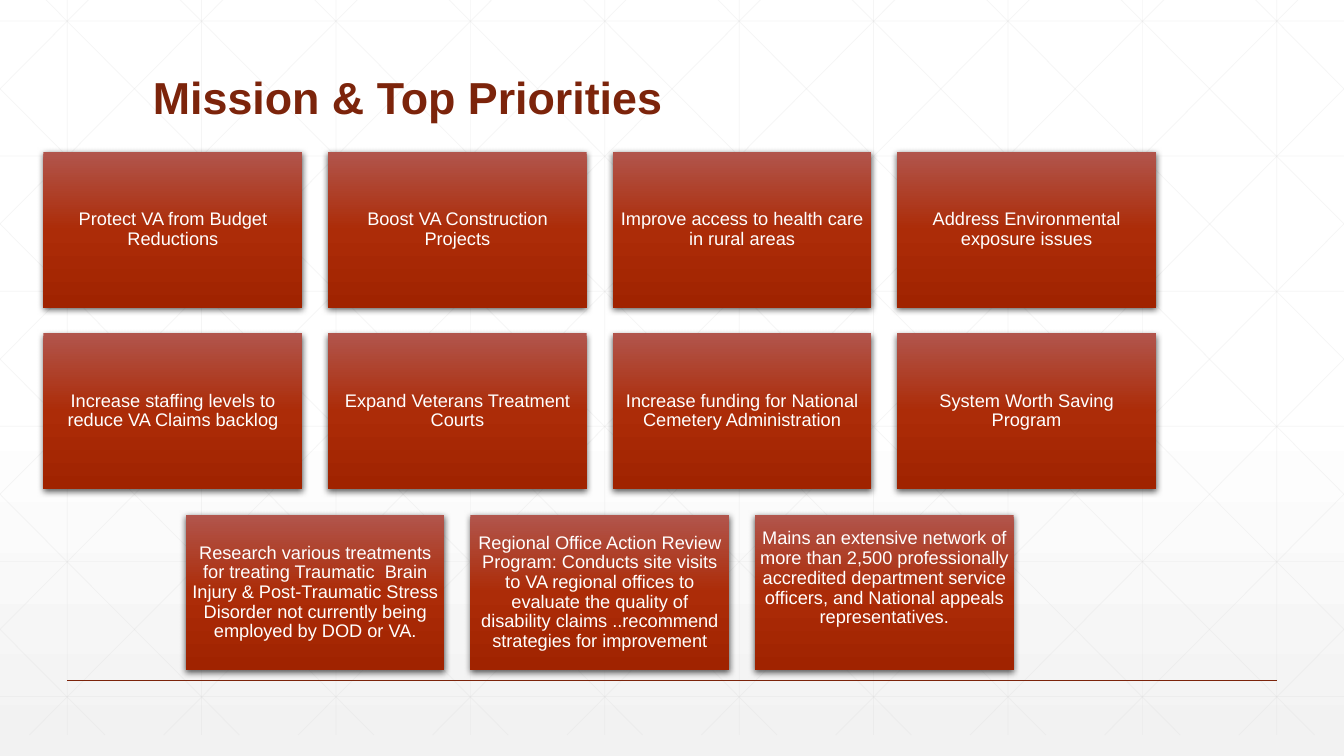
"""Build the Mission & Top Priorities slide."""
from lxml import etree
from pptx import Presentation
from pptx import util as u
from pptx.dml.color import RGBColor
from pptx.enum import shapes, text
from pptx.oxml import ns

TITLE = "Mission & Top Priorities"
ROWS = [
    ["Protect VA from Budget Reductions",
     "Boost VA Construction Projects",
     "Improve access to health care in rural areas",
     "Address Environmental exposure issues"],
    ["Increase staffing levels to reduce VA Claims backlog",
     "Expand Veterans Treatment Courts",
     "Increase funding for National Cemetery Administration",
     "System Worth Saving Program"],
    ["Research various treatments for treating Traumatic  Brain Injury & "
     "Post-Traumatic Stress Disorder not currently being employed by DOD or VA.",
     "Regional Office Action Review Program: Conducts site visits to VA regional "
     "offices to evaluate the quality of disability claims ..recommend strategies "
     "for improvement",
     "Mains an extensive network of more than 2,500 professionally accredited "
     "department service officers, and National appeals representatives."],
]
COLORS = {"accent": "7C240B", "lattice": "D9D9D9", "white": "FFFFFF", "grey": "F2F2F2",
          "card_top": "B1554C", "card_mid": "AC2C08", "card_end": "A02300",
          "shadow": "000000"}
PAGE_STOPS = [(0, "white"), (53, "white"), (100, "grey")]
CARD_STOPS = [(0, "card_top"), (50, "card_mid"), (100, "card_end")]
FONT = "Arial"
PAGE_W, PAGE_H = 960, 540
LATTICE_TOP, LATTICE_H, DIAGONAL_W, STEP = -15, 540, 537, 96
CARD_LEFT, CARD_TOP, CARD_W, CARD_H, GAP = 31.1, 108.7, 184.75, 111, 18.5
INSET, LAST_BOTTOM_INSET = 3.6, 23.6


def rgb(name):
    return RGBColor.from_string(COLORS[name])


def add_color(parent, name, alpha=None):
    clr = etree.SubElement(parent, ns.qn("a:srgbClr"), val=COLORS[name])
    if alpha:
        etree.SubElement(clr, ns.qn("a:alpha"), val=str(alpha * 1000))


def set_gradient(fill, element, stops):
    fill.gradient()
    fill.gradient_angle = 270
    stop_list = element.find(".//" + ns.qn("a:gsLst"))
    for old in list(stop_list):
        stop_list.remove(old)
    for pos, name in stops:
        add_color(etree.SubElement(stop_list, ns.qn("a:gs"), pos=str(pos * 1000)), name)


def add_line(s, x1, y1, x2, y2, color, width, alpha=None):
    c = s.shapes.add_connector(shapes.MSO_CONNECTOR.STRAIGHT,
                               *(u.Pt(round(v, 2)) for v in (x1, y1, x2, y2)))
    c.line.color.rgb = rgb(color)
    c.line.width = u.Pt(width)
    if alpha:
        clr = c._element.find(".//" + ns.qn("a:srgbClr"))
        etree.SubElement(clr, ns.qn("a:alpha"), val=str(alpha * 1000))
    etree.SubElement(c._element.spPr, ns.qn("a:effectLst"))


def add_lattice(s):
    bottom = LATTICE_TOP + LATTICE_H
    lines = [(x, LATTICE_TOP, x, bottom) for x in range(48, PAGE_W, STEP)]
    lines += [(0, 15 + 96.5 * i, PAGE_W, 15 + 96.5 * i) for i in range(6)]
    slope = LATTICE_H / DIAGONAL_W
    for i in range(-5, 10):
        start = 18 + STEP * i
        x1, x2 = max(start, 0), min(start + DIAGONAL_W, PAGE_W)
        y1, y2 = (LATTICE_TOP + (x - start) * slope for x in (x1, x2))
        lines += [(x1, y1, x2, y2), (PAGE_W - x1, y1, PAGE_W - x2, y2)]
    for ends in lines:
        add_line(s, *ends, "lattice", 0.5, 25)


def add_run(p, words, size, color, bold=False):
    r = p.add_run()
    r.text = words
    r.font.name, r.font.size, r.font.bold = FONT, u.Pt(size), bold
    r.font.color.rgb = rgb(color)


def add_title(s):
    sp = s.shapes.title
    s.shapes._spTree.append(sp._element)
    sp.left, sp.top, sp.width, sp.height = (u.Pt(v) for v in (102, 18, 756, 74))
    tf = sp.text_frame
    tf.vertical_anchor = text.MSO_ANCHOR.BOTTOM
    p = tf.paragraphs[0]
    p.alignment, p.line_spacing = text.PP_ALIGN.LEFT, 0.9
    add_run(p, TITLE, 32, "accent", True)


def add_card(s, x, y, words, bottom_inset):
    sp = s.shapes.add_shape(shapes.MSO_SHAPE.RECTANGLE,
                            *(u.Pt(round(v, 2)) for v in (x, y, CARD_W, CARD_H)))
    set_gradient(sp.fill, sp._element, CARD_STOPS)
    sp.line.fill.background()
    sp.shadow.inherit = False
    effects = sp._element.spPr.find(ns.qn("a:effectLst"))
    shadow = etree.SubElement(effects, ns.qn("a:outerShdw"), blurRad=str(u.Pt(4.5)),
                              dist=str(u.Pt(1.5)), dir="5400000", rotWithShape="0")
    add_color(shadow, "shadow", 63)
    tf = sp.text_frame
    tf.word_wrap = True
    tf.vertical_anchor = text.MSO_ANCHOR.MIDDLE
    tf.margin_left = tf.margin_right = tf.margin_top = u.Pt(INSET)
    tf.margin_bottom = u.Pt(bottom_inset)
    p = tf.paragraphs[0]
    p.alignment, p.line_spacing = text.PP_ALIGN.CENTER, 0.9
    add_run(p, words, 13, "white")


def main():
    prs = Presentation()
    prs.slide_width, prs.slide_height = u.Pt(PAGE_W), u.Pt(PAGE_H)
    s = prs.slides.add_slide(prs.slide_layouts[5])
    set_gradient(s.background.fill, s._element, PAGE_STOPS)
    add_lattice(s)
    add_line(s, 48, 486, 912, 486, "accent", 1)
    add_title(s)
    for i, row in enumerate(ROWS):
        left = CARD_LEFT + (len(ROWS[0]) - len(row)) * (CARD_W + GAP) / 2
        for j, words in enumerate(row):
            is_last = words == ROWS[-1][-1]
            add_card(s, left + j * (CARD_W + GAP), CARD_TOP + i * (CARD_H + GAP), words,
                     LAST_BOTTOM_INSET if is_last else INSET)
    prs.save("out.pptx")


if __name__ == "__main__":
    main()
